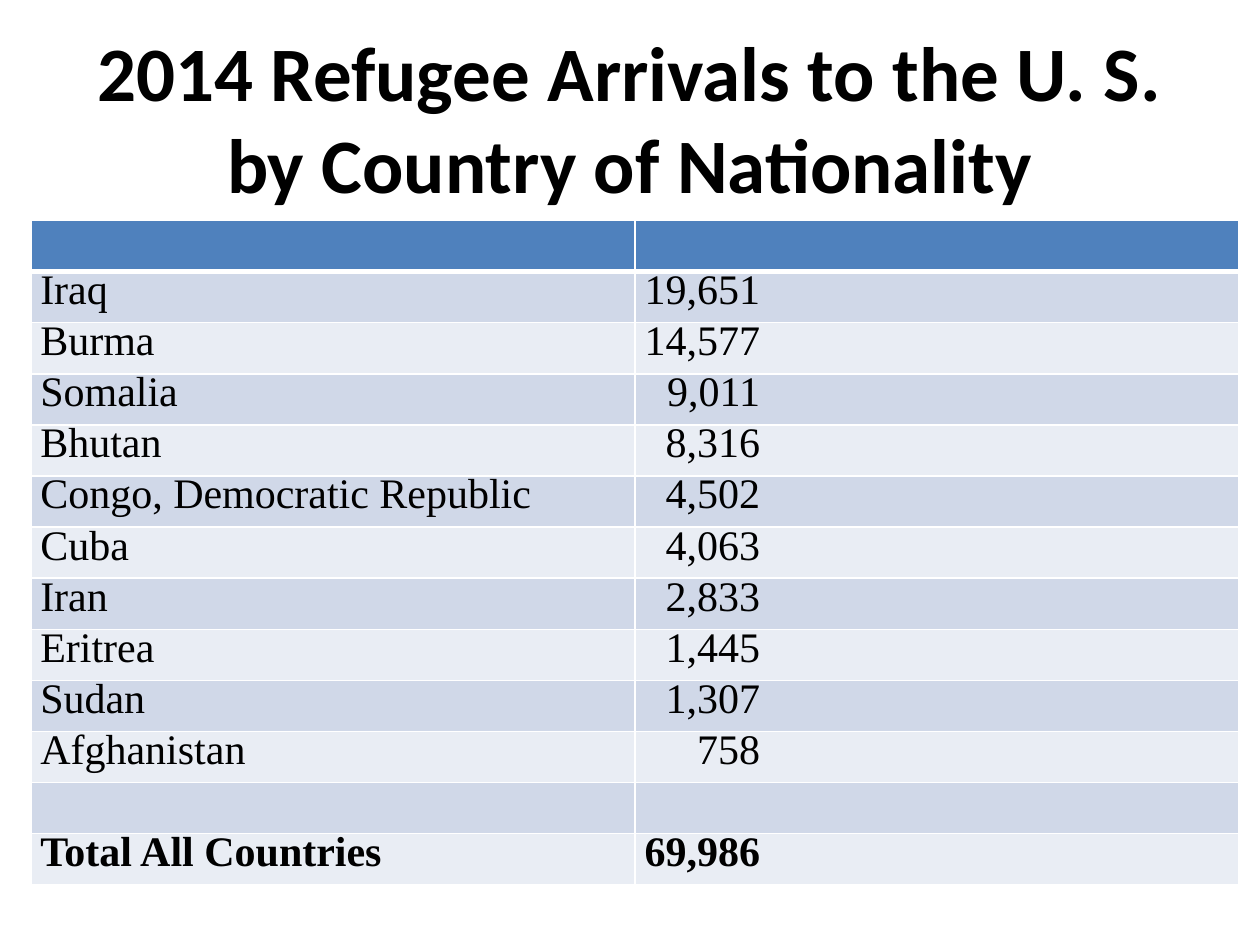
"""Build a slide that tabulates 2014 refugee arrivals by nationality."""
from dataclasses import dataclass

from lxml import etree
from pptx import Presentation
from pptx.dml.color import RGBColor
from pptx.enum.text import MSO_ANCHOR, PP_ALIGN
from pptx.oxml.ns import qn
from pptx.util import Pt

LEFT, CENTER, RIGHT = PP_ALIGN.LEFT, PP_ALIGN.CENTER, PP_ALIGN.RIGHT
MIDDLE = MSO_ANCHOR.MIDDLE


@dataclass(frozen=True)
class Theme:
    ink: str = "000000"
    rule: str = "FFFFFF"
    header: str = "4F81BD"
    bands: tuple = ("D0D8E8", "E9EDF4")
    title_font: str = "Calibri"
    body_font: str = "Times New Roman"
    title_size: float = 44
    body_size: float = 24


@dataclass(frozen=True)
class Arrival:
    country: str = ""
    count: str = ""
    bold: bool = False


THEME = Theme()
ARRIVALS = (
    Arrival("Iraq", "19,651"),
    Arrival("Burma", "14,577"),
    Arrival("Somalia", "9,011"),
    Arrival("Bhutan", "8,316"),
    Arrival("Congo, Democratic Republic", "4,502"),
    Arrival("Cuba", "4,063"),
    Arrival("Iran", "2,833"),
    Arrival("Eritrea", "1,445"),
    Arrival("Sudan", "1,307"),
    Arrival("Afghanistan", "758"),
    Arrival(),
    Arrival("Total All Countries", "69,986", bold=True),
)
COLUMN_WIDTH, ROW_HEIGHT = 344.9, 29.2
CELL_INSET, COUNT_RIGHT_INSET = 5.04, 273.5


def write_text(frame, text: str, *, font: str, size: float, bold: bool = False,
               align=LEFT, spacing: float | None = None) -> None:
    para = frame.paragraphs[0]
    para.alignment = align
    if spacing:
        para.line_spacing = Pt(spacing)
    if not text:
        return
    span = para.add_run()
    span.text = text
    span.font.name = font
    span.font.size = Pt(size)
    span.font.bold = bold
    span.font.color.rgb = RGBColor.from_string(THEME.ink)


def style_cell(cell, fill: str, bottom_width: float = 1) -> None:
    properties = cell._tc.get_or_add_tcPr()
    for side, width in (("L", 1), ("R", 1), ("T", 1), ("B", bottom_width)):
        line = etree.SubElement(properties, qn(f"a:ln{side}"), w=str(Pt(width)))
        solid = etree.SubElement(line, qn("a:solidFill"))
        etree.SubElement(solid, qn("a:srgbClr"), val=THEME.rule)
    cell.fill.solid()
    cell.fill.fore_color.rgb = RGBColor.from_string(fill)


def fill_cell(cell, text: str, *, bold: bool, numeric: bool) -> None:
    cell.margin_top = cell.margin_bottom = 0
    cell.margin_left = Pt(0 if numeric else CELL_INSET)
    cell.margin_right = Pt(COUNT_RIGHT_INSET if numeric else CELL_INSET)
    write_text(cell.text_frame, text, font=THEME.body_font, size=THEME.body_size,
               bold=bold, align=RIGHT if numeric else LEFT, spacing=THEME.body_size)


def add_title(page, text: str) -> None:
    box = page.shapes.add_textbox(Pt(36), Pt(21.6), Pt(648), Pt(90))
    box.text_frame.word_wrap = True
    box.text_frame.vertical_anchor = MIDDLE
    write_text(box.text_frame, text, font=THEME.title_font, size=THEME.title_size,
               bold=True, align=CENTER)


def add_arrivals_table(page, arrivals: tuple[Arrival, ...]) -> None:
    row_count = len(arrivals) + 1
    table = page.shapes.add_table(row_count, 2, Pt(18), Pt(126), Pt(2 * COLUMN_WIDTH),
                                  Pt(row_count * ROW_HEIGHT)).table
    table.first_row = table.horz_banding = False
    for column in table.columns:
        column.width = Pt(COLUMN_WIDTH)
    for row in table.rows:
        row.height = Pt(ROW_HEIGHT)
    for cell in table.rows[0].cells:
        style_cell(cell, THEME.header, bottom_width=3)
    for index, arrival in enumerate(arrivals):
        country_cell, count_cell = table.rows[index + 1].cells
        for cell in (country_cell, count_cell):
            style_cell(cell, THEME.bands[index % 2])
        fill_cell(country_cell, arrival.country, bold=arrival.bold, numeric=False)
        fill_cell(count_cell, arrival.count, bold=arrival.bold, numeric=True)


def main() -> None:
    deck = Presentation()
    deck.slide_width, deck.slide_height = Pt(720), Pt(540)
    page = deck.slides.add_slide(deck.slide_layouts[6])
    add_title(page, "2014 Refugee Arrivals to the U. S. by Country of Nationality")
    add_arrivals_table(page, ARRIVALS)
    deck.save("out.pptx")


if __name__ == "__main__":
    main()
